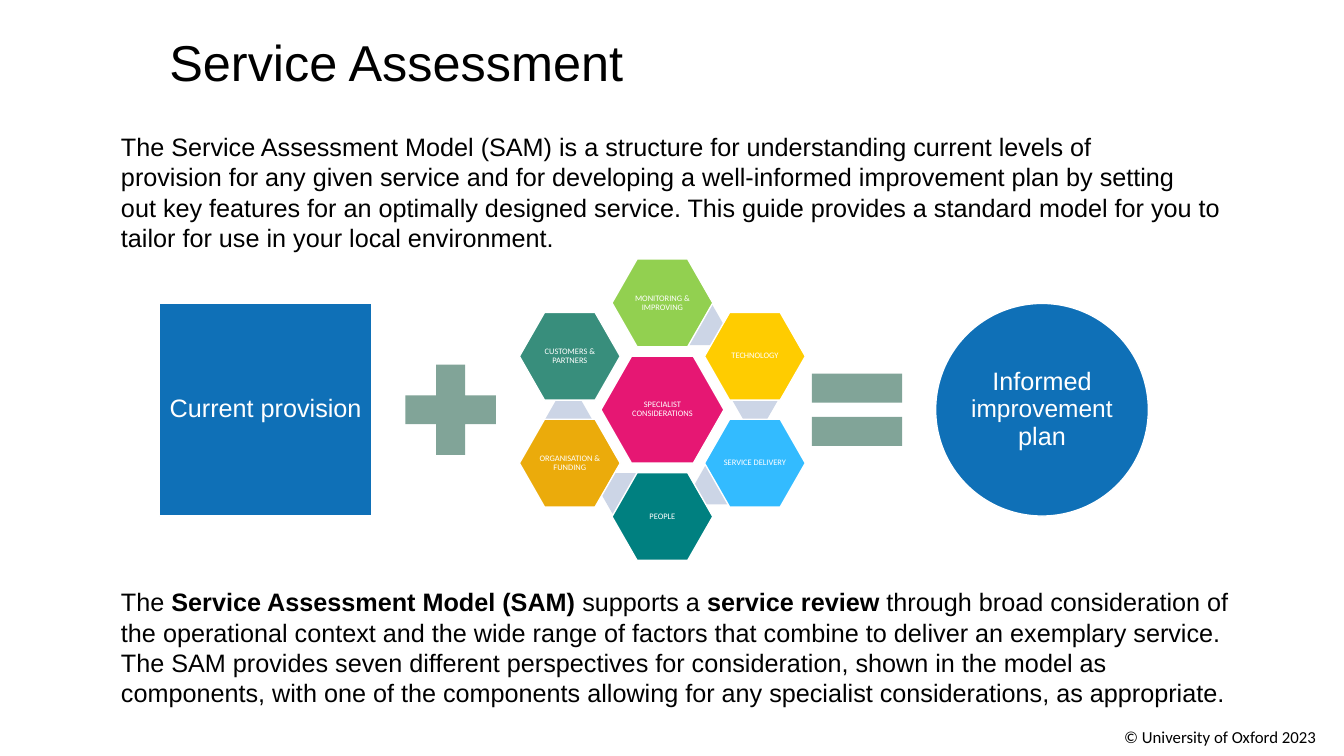
from dataclasses import dataclass
from math import cos, radians, sin

from lxml import etree
from pptx import Presentation
from pptx.dml.color import RGBColor
from pptx.enum.shapes import MSO_SHAPE
from pptx.enum.text import MSO_ANCHOR, MSO_AUTO_SIZE, PP_ALIGN
from pptx.oxml.ns import qn
from pptx.util import Pt

EMU_PER_PX = 9144  # 100 px to the inch
NBSP = chr(160)
LEFT, CENTER = PP_ALIGN.LEFT, PP_ALIGN.CENTER
TOP, MIDDLE = MSO_ANCHOR.TOP, MSO_ANCHOR.MIDDLE
NO_FIT = MSO_AUTO_SIZE.NONE
SQUARE, CIRCLE, HEXAGON = MSO_SHAPE.RECTANGLE, MSO_SHAPE.OVAL, MSO_SHAPE.HEXAGON
PLUS, EQUALS = MSO_SHAPE.MATH_PLUS, MSO_SHAPE.MATH_EQUAL
TWO_CONTENT = 3


@dataclass(frozen=True)
class Theme:
    font: str = "Arial"
    small_font: str = "Calibri"
    ink: str = "000000"
    white: str = "FFFFFF"
    blue: str = "0F70B7"
    sage: str = "81A498"
    pink: str = "E61773"
    link: str = "CCD5E6"
    title: float = 36
    body: float = 18
    tight: float = 17.5
    footer: float = 12
    label: float = 6


THEME = Theme()

INTRO = (
    "The Service Assessment Model (SAM) is a structure for understanding current levels of\n"
    "provision for any given service and for developing a well-informed improvement plan "
    f"by setting out{NBSP}key{NBSP}features for an optimally designed service. This guide "
    "provides a standard model for you to tailor for use in your local environment."
)
CLOSING = [
    ("The ", {}),
    ("Service Assessment Model (SAM) ", {"bold": True}),
    ("supports a ", {}),
    ("service review ", {"bold": True}),
    ("through broad consideration of the operational context and the wide range of "
     "factors that combine to deliver an exemplary service. The SAM provides seven "
     "different perspectives for consideration, shown in the model as components, with "
     "one of the components allowing for any specialist considerations, as appropriate.", {}),
]
PLAN = [("Informed ", {}), ("improvement", {"size": THEME.tight}), (" plan", {})]

# Label, fill, angle on the ring, offset of the link behind it from the centre
COMPONENTS = [
    ("MONITORING & IMPROVING", "92D050", -90, (38, -84)),
    ("TECHNOLOGY", "FFCC00", -30, (92, -10)),
    ("SERVICE DELIVERY", "33BBFF", 30, (55, 74)),
    ("PEOPLE", "008080", 90, (-38, 83)),
    ("ORGANISATION & FUNDING", "EBAB0B", 150, (-93, 9)),
    ("CUSTOMERS & PARTNERS", "388E7C", 210, None),
]


def px(length):
    return round(length * EMU_PER_PX)


def place(shape, box):
    shape.left, shape.top, shape.width, shape.height = map(px, box)


def write(frame, text, size=THEME.body, font=THEME.font, color=THEME.ink,
          align=LEFT, anchor=TOP, spacing=1.0, inset=None, wrap=True):
    """Fill a text frame with one paragraph of plain or mixed spans."""
    frame.auto_size = NO_FIT
    frame.word_wrap = wrap
    frame.vertical_anchor = anchor
    if inset is not None:
        frame.margin_left = frame.margin_right = px(inset)
        frame.margin_top = frame.margin_bottom = px(inset)
    para = frame.paragraphs[0]
    properties = para._p.get_or_add_pPr()
    properties.set("marL", "0")
    properties.set("indent", "0")
    etree.SubElement(properties, qn("a:buNone"))
    para.alignment = align
    para.line_spacing = spacing
    para.space_before = Pt(0)
    for content, style in [(text, {})] if isinstance(text, str) else text:
        for number, line in enumerate(content.split("\n")):
            if number:
                para.add_line_break()
            span = para.add_run()
            span.text = line
            span.font.name = font
            span.font.size = Pt(style.get("size", size))
            span.font.bold = style.get("bold", False)
            span.font.color.rgb = RGBColor.from_string(color)


def add_figure(page, kind, box, fill, outlined=False, text=None, **text_format):
    shape = page.shapes.add_shape(kind, *map(px, box))
    shape.shadow.inherit = False
    shape.fill.solid()
    shape.fill.fore_color.rgb = RGBColor.from_string(fill)
    if outlined:
        shape.line.color.rgb = RGBColor.from_string(THEME.white)
        shape.line.width = Pt(1)
    else:
        shape.line.fill.background()
    if kind == HEXAGON:
        shape.adjustments[0] = 0.286
        shape.adjustments[1] = 1.155
    if text:
        write(shape.text_frame, text, color=THEME.white, align=CENTER,
              anchor=MIDDLE, spacing=0.9, **text_format)
    return shape


def add_hexagon(page, center, size, fill, label=None):
    """Place a hexagon by its centre; labelled ones have a white outline."""
    (x, y), (width, height) = center, size
    add_figure(page, HEXAGON, (x - width / 2, y - height / 2, width, height), fill,
               outlined=label is not None, text=label,
               size=THEME.label, font=THEME.small_font, inset=1)


def add_component_ring(page, box):
    left, top, width, height = box
    x, y = left + width / 2, top + height / 2
    radius = 106
    add_hexagon(page, (x, y), (122, 106), THEME.pink, "SPECIALIST CONSIDERATIONS")
    for label, fill, angle, link in COMPONENTS:
        if link:
            add_hexagon(page, (x + link[0], y + link[1]), (46, 40), THEME.link)
        turn = radians(angle)
        center = (x + radius * cos(turn), y + radius * sin(turn))
        add_hexagon(page, center, (100, 87), fill, label)


def add_equation(page, box):
    """Current provision + component ring = informed improvement plan."""
    left, top, width, height = box
    sign = 122
    sign_top = top + (height - sign) / 2
    add_figure(page, SQUARE, (left, top, height, height), THEME.blue, True,
               "Current provision", inset=2)
    add_figure(page, PLUS, (left + 228, sign_top, sign, sign), THEME.sage)
    add_component_ring(page, (left + 356, top - 45, 286, height + 90))
    add_figure(page, EQUALS, (left + 631, sign_top, sign, sign), THEME.sage)
    add_figure(page, CIRCLE, (left + width - height, top, height, height), THEME.blue,
               True, PLAN, inset=2)


def add_text_regions(page):
    title = page.shapes.title
    intro, closing = page.placeholders[1], page.placeholders[2]
    place(title, (158, 26, 900, 71))
    place(intro, (110, 125, 1125, 131))
    place(closing, (110, 577, 1125, 131))
    write(title.text_frame, "Service Assessment", size=THEME.title)
    write(intro.text_frame, INTRO, anchor=MIDDLE)
    write(closing.text_frame, CLOSING)


def add_copyright(page, box):
    note = page.shapes.add_textbox(*map(px, box))
    write(note.text_frame, "© University of Oxford 2023", size=THEME.footer,
          font=THEME.small_font, wrap=False)


def main():
    deck = Presentation()
    deck.slide_width, deck.slide_height = px(1333), px(750)
    page = deck.slides.add_slide(deck.slide_layouts[TWO_CONTENT])
    add_text_regions(page)
    add_equation(page, (158, 301, 981, 211))
    add_copyright(page, (1105, 716, 229, 30))
    deck.save("out.pptx")


if __name__ == "__main__":
    main()
